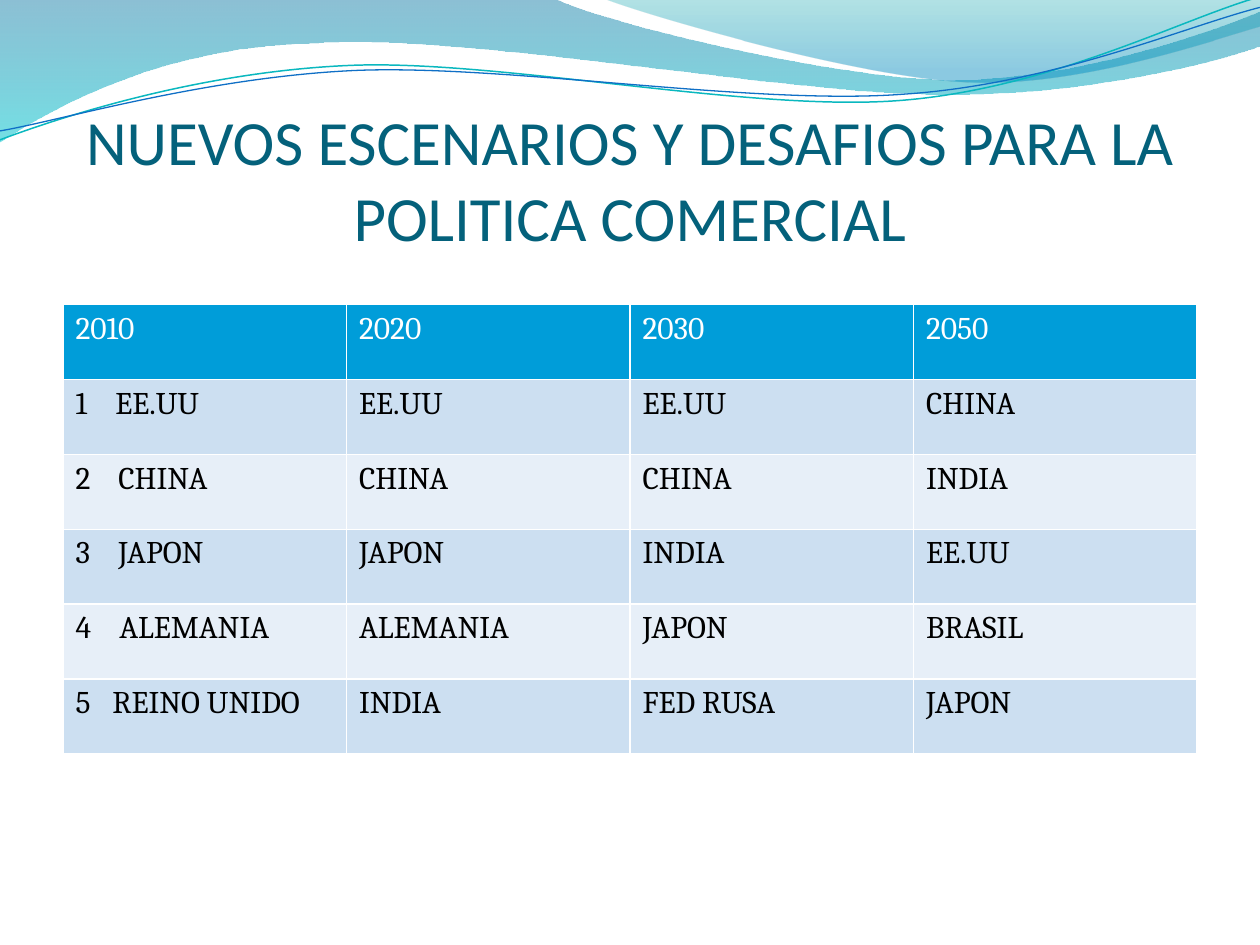
import pptx
import pptx.dml.color
import pptx.enum.text
import pptx.oxml.ns
import pptx.util
from lxml import etree

Cm = pptx.util.Cm
RGBColor = pptx.dml.color.RGBColor

WHITE = RGBColor(0xFF, 0xFF, 0xFF)
BLACK = RGBColor(0x00, 0x00, 0x00)
TITLE_TEAL = RGBColor(0x04, 0x61, 0x7B)
HEADER_BLUE = RGBColor(0x00, 0x9D, 0xD9)
BAND_DARK = RGBColor(0xCC, 0xDF, 0xF1)
BAND_LIGHT = RGBColor(0xE7, 0xEF, 0xF8)
WAVE_BLUE = RGBColor(0x00, 0x74, 0xA1)
WAVE_CYAN = RGBColor(0x00, 0xC6, 0xCF)
CREST_TEAL = RGBColor(0x00, 0xA1, 0xA9)
CREST_BLUE = RGBColor(0x00, 0x8B, 0xBF)
LINE_TEAL = RGBColor(0x0A, 0xB8, 0xBF)
LINE_BLUE = RGBColor(0x0F, 0x6F, 0xC6)

# Outlines in centimetres: one point is a straight step, three are a Bezier step
WAVE = [
    [(0, 0)], [(11.18, -0.03)],
    [(12.09, 0.43), (16.87, 1.6), (19.25, 1.6)],
    [(21.67, 1.6), (24.33, 0.66), (25.4, 0.23)],
    [(25.43, 0.91)],
    [(24.97, 1.12), (22.1, 1.93), (18.95, 1.9)],
    [(15.8, 1.9), (9.7, 0.71), (6.53, 0.86)],
    [(3.28, 0.91), (1.17, 2.11), (-0.03, 2.87)],
]
CREST = [
    [(12.17, -0.03)],
    [(12.93, 0.28), (17.32, 1.57), (19.53, 1.65)],
    [(21.74, 1.75), (24.41, 0.81), (25.4, 0.53)],
    [(25.4, 0)],
]
TEAL_CURVE = [
    [(0, 2.82)],
    [(1.22, 2.36), (4.01, 1.45), (7.04, 1.32)],
    [(10.03, 1.19), (15.06, 2.26), (18.11, 2.03)],
    [(21.16, 1.8), (23.83, 0.38), (25.35, -0.05)],
]
BLUE_CURVE = [
    [(0, 2.64)],
    [(1.19, 2.44), (4.17, 1.55), (7.19, 1.42)],
    [(10.24, 1.3), (15.16, 2.13), (18.21, 1.9)],
    [(21.23, 1.7), (23.9, 0.53), (25.4, 0.15)],
]

RANKING = [
    ["2010", "2020", "2030", "2050"],
    ["1\tEE.UU", "EE.UU", "EE.UU", "CHINA"],
    ["2\tCHINA", "CHINA", "CHINA", "INDIA"],
    ["3\tJAPON", "JAPON", "INDIA", "EE.UU"],
    ["4\tALEMANIA", "ALEMANIA", "JAPON", "BRASIL"],
    ["5\tREINO UNIDO", "INDIA", "FED RUSA", "JAPON"],
]
RANK_TABS = [None, Cm(0.8), Cm(0.86), Cm(0.86), Cm(0.88), Cm(0.74)]


def add_element(parent, tag, **attributes):
    element = etree.SubElement(parent, pptx.oxml.ns.qn(tag))
    for name, value in attributes.items():
        element.set(name, str(value))
    return element


def write_text(frame, text, *, font, size, color, align=None, tab=None):
    paragraph = frame.paragraphs[0]
    paragraph.alignment = align
    run = paragraph.add_run()
    run.text = text
    run.font.name = font
    run.font.size = pptx.util.Pt(size)
    run.font.color.rgb = color
    if tab:
        tab_list = add_element(paragraph._p.get_or_add_pPr(), "a:tabLst")
        add_element(tab_list, "a:tab", pos=int(tab), algn="l")


class SlideBuilder:
    title_font = "Calibri"
    body_font = "Cambria"

    def __init__(self, presentation):
        self.slide = presentation.slides.add_slide(presentation.slide_layouts[5])

    def freeform(self, outline, close):
        points = [(Cm(x), Cm(y)) for segment in outline for x, y in segment]
        builder = self.slide.shapes.build_freeform(*points[0])
        builder.add_line_segments(points[1:], close=close)
        shape = builder.convert_to_shape()
        shape.shadow.inherit = False
        # Join each three control points into one Bezier step
        steps = iter(list(shape._element.iter(pptx.oxml.ns.qn("a:lnTo"))))
        for segment in outline[1:]:
            first, *others = [next(steps) for _ in segment]
            if others:
                first.tag = pptx.oxml.ns.qn("a:cubicBezTo")
            for other in others:
                first.append(other[0])
                other.getparent().remove(other)
        return shape

    def wave(self, outline, stops):
        """Closed shape with a see-through gradient from top to bottom."""
        shape = self.freeform(outline, close=True)
        shape.line.fill.background()
        shape.fill.gradient()
        shape.fill.gradient_angle = 270
        for stop, (position, color, opacity) in zip(shape.fill.gradient_stops, stops):
            stop.position = position
            stop.color.rgb = color
            add_element(stop._gs[0], "a:alpha", val=opacity * 1000)

    def curve(self, outline, color, width):
        shape = self.freeform(outline, close=False)
        shape.fill.background()
        shape.line.color.rgb = color
        shape.line.width = pptx.util.Pt(width)

    def title(self, text):
        title = self.slide.shapes.title
        self.slide.shapes._spTree.append(title._element)  # in front of the waves
        title.left, title.top = Cm(1.27), Cm(1.95)
        title.width, title.height = Cm(22.86), Cm(3.17)
        frame = title.text_frame
        frame.word_wrap = True
        frame.auto_size = pptx.enum.text.MSO_AUTO_SIZE.NONE
        frame.vertical_anchor = pptx.enum.text.MSO_ANCHOR.BOTTOM
        frame.margin_left = frame.margin_right = frame.margin_bottom = 0
        frame.margin_top = Cm(0.13)
        write_text(frame, text, font=self.title_font, size=36, color=TITLE_TEAL,
                   align=pptx.enum.text.PP_ALIGN.CENTER)

    def borders(self, cell):
        properties = cell._tc.get_or_add_tcPr()
        for index, side in enumerate("LRTB"):
            line = etree.Element(pptx.oxml.ns.qn(f"a:ln{side}"),
                                 w=str(pptx.util.Pt(1)))
            add_element(add_element(line, "a:solidFill"), "a:srgbClr", val=WHITE)
            properties.insert(index, line)

    def table(self, rows, tabs):
        table = self.slide.shapes.add_table(
            len(rows), len(rows[0]), Cm(1.27), Cm(6.14), Cm(22.86), Cm(9.06)).table
        for row_index, row in enumerate(rows):
            header = row_index == 0
            band = BAND_DARK if row_index % 2 else BAND_LIGHT
            for column_index, text in enumerate(row):
                cell = table.cell(row_index, column_index)
                cell.fill.solid()
                cell.fill.fore_color.rgb = HEADER_BLUE if header else band
                self.borders(cell)
                write_text(cell.text_frame, text, font=self.body_font, size=18,
                           color=WHITE if header else BLACK,
                           tab=tabs[row_index] if column_index == 0 else None)


def main():
    presentation = pptx.Presentation()
    presentation.slide_width, presentation.slide_height = Cm(25.4), Cm(19.05)
    builder = SlideBuilder(presentation)

    # Waves along the top edge
    builder.wave(WAVE, [(0, WAVE_BLUE, 45), (1, WAVE_CYAN, 55)])
    builder.wave(CREST, [(0, CREST_TEAL, 30), (0.8, CREST_BLUE, 45)])
    builder.curve(TEAL_CURVE, LINE_TEAL, 0.85)
    builder.curve(BLUE_CURVE, LINE_BLUE, 0.75)

    # Title and ranking of countries by year
    builder.title("NUEVOS ESCENARIOS Y DESAFIOS PARA LA POLITICA COMERCIAL")
    builder.table(RANKING, RANK_TABS)

    presentation.save("out.pptx")


if __name__ == "__main__":
    main()
